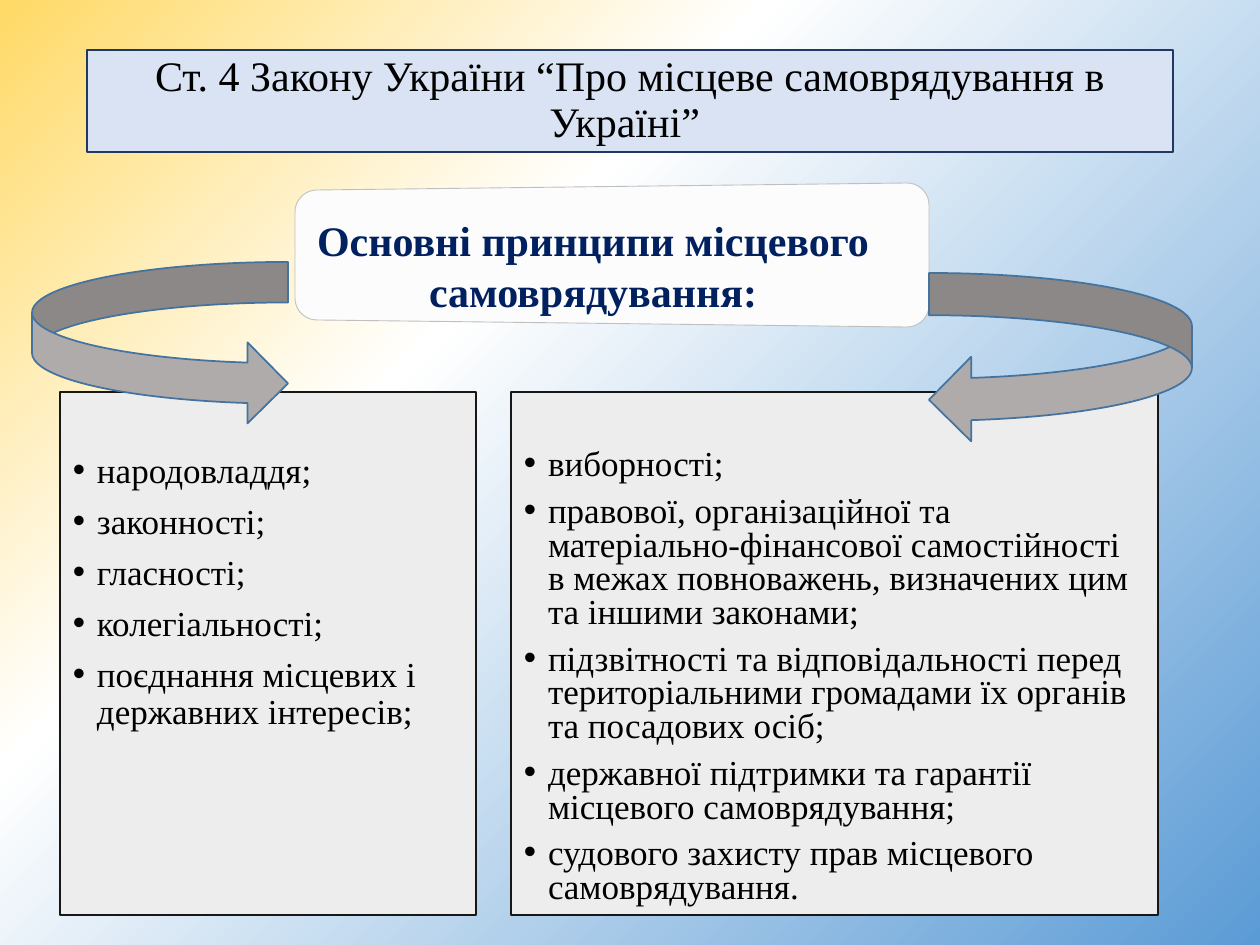
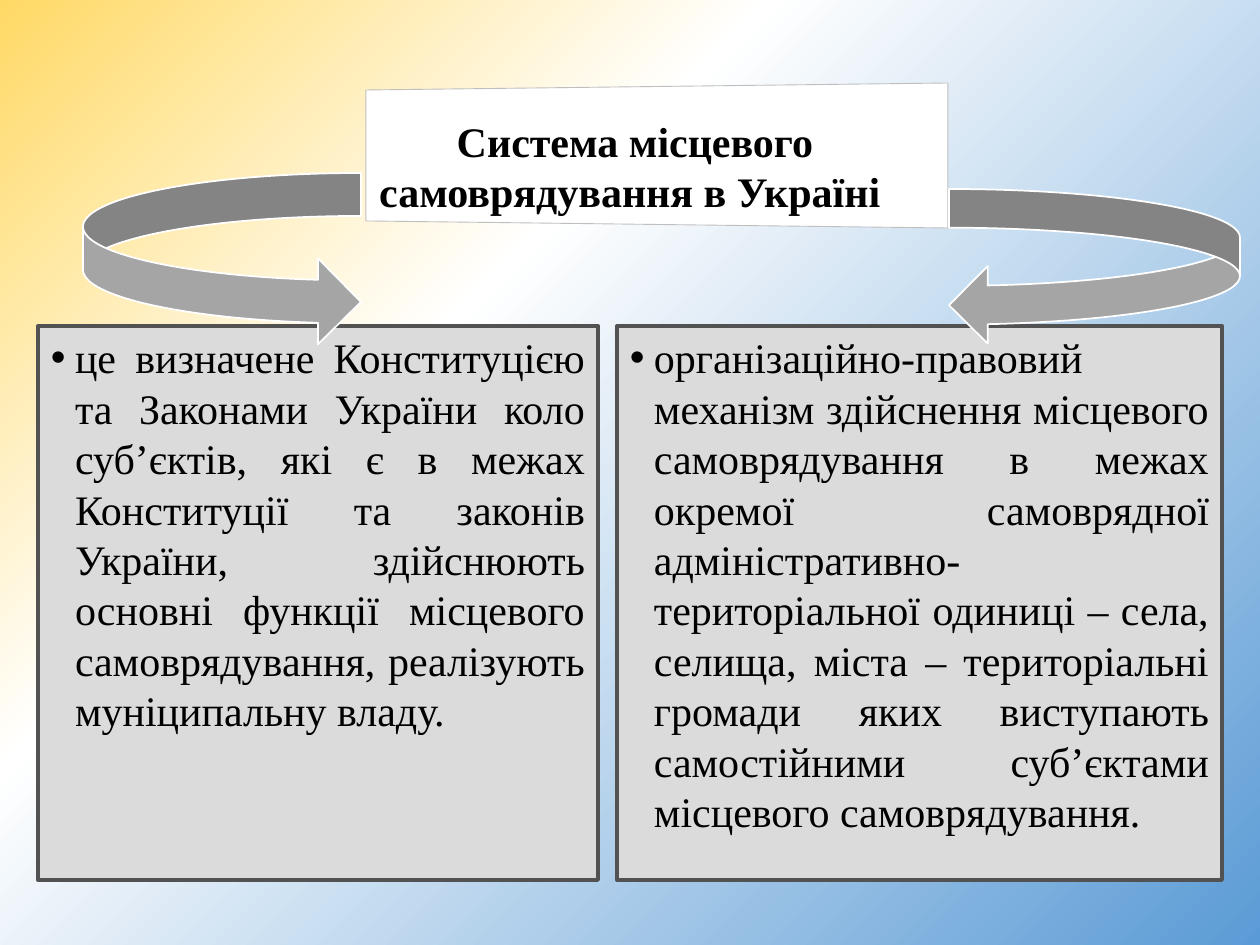
import math

from lxml import etree
from pptx import Presentation
from pptx.dml.color import RGBColor
from pptx.enum import shapes, text
from pptx.oxml import ns, parse_xml
from pptx.util import Emu, Pt

# Shared look
SCALE = 914400 / 126
WIDTH, HEIGHT = 1260, 945
FONT = "Times New Roman"
BLACK, NAVY = "000000", "002060"
BACKGROUND = [(0, "FFD966"), (35, "FFFFFF"), (100, "5B9BD5")]
INDENT = 24
SIDE_INSET, TOP_INSET = 13, 6
LEFT_ARROW = shapes.MSO_SHAPE.CURVED_RIGHT_ARROW
RIGHT_ARROW = shapes.MSO_SHAPE.CURVED_LEFT_ARROW

PRINCIPLES_LEFT = [
    "народовладдя;",
    "законності;",
    "гласності;",
    "колегіальності;",
    "поєднання місцевих і державних інтересів;",
]
PRINCIPLES_RIGHT = [
    "виборності;",
    "правової, організаційної та матеріально-фінансової самостійності "
    "в межах повноважень, визначених цим та іншими законами;",
    "підзвітності та відповідальності перед територіальними громадами "
    "їх органів та посадових осіб;",
    "державної підтримки та гарантії місцевого самоврядування;",
    "судового захисту прав місцевого самоврядування.",
]
SYSTEM_LEFT = [
    "це визначене Конституцією та Законами України коло суб’єктів, які є "
    "в межах Конституції та законів України, здійснюють основні функції "
    "місцевого самоврядування, реалізують муніципальну владу."
]
SYSTEM_RIGHT = [
    "організаційно-правовий механізм здійснення місцевого самоврядування "
    "в межах окремої самоврядної адміністративно-територіальної одиниці – "
    "села, селища, міста – територіальні громади яких виступають "
    "самостійними суб’єктами місцевого самоврядування. "
]


def px(length):
    return Emu(round(length * SCALE))


def colour(value):
    return RGBColor.from_string(value)


def add_page(deck):
    """Add a blank page with the diagonal gradient."""
    page = deck.slides.add_slide(deck.slide_layouts[6])
    stops = "".join(
        f'<a:gs pos="{place * 1000}"><a:srgbClr val="{value}"/></a:gs>'
        for place, value in BACKGROUND)
    gradient = parse_xml(
        f'<a:gradFill {ns.nsdecls("a")} rotWithShape="1"><a:gsLst>{stops}'
        '</a:gsLst><a:lin ang="2700000" scaled="0"/></a:gradFill>')
    fill = page.background.fill
    fill.solid()
    properties = page.background._cSld.bg.bgPr
    properties.replace(properties[0], gradient)
    return page


def style(box, fill, line, line_width):
    box.shadow.inherit = False
    box.fill.solid()
    box.fill.fore_color.rgb = colour(fill)
    box.line.color.rgb = colour(line)
    box.line.width = Pt(line_width)
    return box


def add_preset(page, kind, area, fill, line, line_width):
    box = page.shapes.add_shape(kind, *map(px, area))
    return style(box, fill, line, line_width)


def set_frame(box, anchor, left=SIDE_INSET, top=TOP_INSET,
              right=SIDE_INSET, bottom=TOP_INSET):
    frame = box.text_frame
    frame.word_wrap = True
    frame.vertical_anchor = anchor
    frame.margin_left, frame.margin_top = px(left), px(top)
    frame.margin_right, frame.margin_bottom = px(right), px(bottom)
    return frame


def write(para, words, size=24, ink=BLACK, bold=False, spacing=1.0, before=0,
          align=text.PP_ALIGN.CENTER, bullet=False):
    para.alignment = align
    para.line_spacing = spacing
    para.space_before = Pt(before)
    span = para.add_run()
    span.text = words
    span.font.name, span.font.size = FONT, Pt(size)
    span.font.bold, span.font.color.rgb = bold, colour(ink)
    if bullet:
        properties = para._p.get_or_add_pPr()
        properties.set("marL", str(px(INDENT)))
        properties.set("indent", str(-px(INDENT)))
        etree.SubElement(properties, ns.qn("a:buFont")).set("typeface", "Arial")
        etree.SubElement(properties, ns.qn("a:buChar")).set("char", "•")


def add_title(page, words):
    box = add_preset(page, shapes.MSO_SHAPE.RECTANGLE, (87, 50, 1086, 102),
                     "DAE3F3", "203864", 1.5)
    frame = set_frame(box, text.MSO_ANCHOR.MIDDLE)
    write(frame.paragraphs[0], words, spacing=0.9)


def add_list(page, area, items, fill, line, line_width, top=TOP_INSET,
             before=0, **format):
    """Add a framed panel of bulleted paragraphs."""
    box = add_preset(page, shapes.MSO_SHAPE.RECTANGLE, area,
                     fill, line, line_width)
    frame = set_frame(box, text.MSO_ANCHOR.TOP, top=top)
    for index, item in enumerate(items):
        para = frame.add_paragraph() if index else frame.paragraphs[0]
        write(para, item, before=before if index else 0, bullet=True, **format)


def plate_outline(left, top, right, bottom, slope, radius):
    """Corners of a plate that is shorter on its left, rounded if asked."""
    corners = [(left, top + slope, 1, 1, 180), (right, top, -1, 1, 270),
               (right, bottom, -1, -1, 0), (left, bottom - slope, 1, -1, 90)]
    if not radius:
        return [corner[:2] for corner in corners]
    return [(x + radius * (across + math.cos(math.radians(start + turn))),
             y + radius * (down + math.sin(math.radians(start + turn))))
            for x, y, across, down, start in corners
            for turn in range(0, 91, 10)]


def add_plate(page, edges, words, fill, ink, right_inset, radius=0):
    """Add the tilted plate that heads the two panels."""
    points = [(px(x), px(y))
              for x, y in plate_outline(*edges, slope=7, radius=radius)]
    builder = page.shapes.build_freeform(*points[0])
    builder.add_line_segments(points[1:], close=True)
    box = style(builder.convert_to_shape(), fill, "BFBFBF", 0.5)
    frame = set_frame(box, text.MSO_ANCHOR.MIDDLE, left=0, top=20,
                      right=right_inset, bottom=0)
    write(frame.paragraphs[0], words, ink=ink, bold=True)


def add_arrows(page, left_area, right_area, fill, line):
    for kind, area in ((LEFT_ARROW, left_area), (RIGHT_ARROW, right_area)):
        add_preset(page, kind, area, fill, line, 1)


def build_principles(deck):
    page = add_page(deck)
    add_title(page, "Ст. 4 Закону України “Про місцеве самоврядування в Україні” ")
    panel = dict(fill="EDEDED", line="181717", line_width=1.5, size=20,
                 before=7.5, align=text.PP_ALIGN.LEFT)
    add_list(page, (60, 392, 416, 523), PRINCIPLES_LEFT,
             top=61, spacing=0.9, **panel)
    add_list(page, (511, 392, 647, 523), PRINCIPLES_RIGHT,
             top=58, spacing=0.8, **panel)
    add_plate(page, (295, 183, 929, 327),
              "Основні принципи місцевого самоврядування:",
              "FCFCFC", NAVY, right_inset=38, radius=22)
    add_arrows(page, (32, 262, 256, 162), (929, 273, 263, 169),
               "AFABAB", "43739E")


def build_system(deck):
    page = add_page(deck)
    panel = dict(fill="DBDBDB", line="525252", line_width=2.25,
                 align=text.PP_ALIGN.JUSTIFY)
    add_list(page, (38, 326, 560, 554), SYSTEM_LEFT, **panel)
    add_list(page, (617, 326, 605, 554), SYSTEM_RIGHT, **panel)
    add_plate(page, (366, 83, 948, 228),
              "Система місцевого самоврядування в Україні ",
              "FFFFFF", BLACK, right_inset=44)
    add_arrows(page, (83, 173, 278, 172), (949, 189, 291, 155),
               "A5A5A5", "FFFFFF")


def main():
    deck = Presentation()
    deck.slide_width, deck.slide_height = px(WIDTH), px(HEIGHT)
    build_principles(deck)
    build_system(deck)
    deck.save("out.pptx")


if __name__ == "__main__":
    main()
